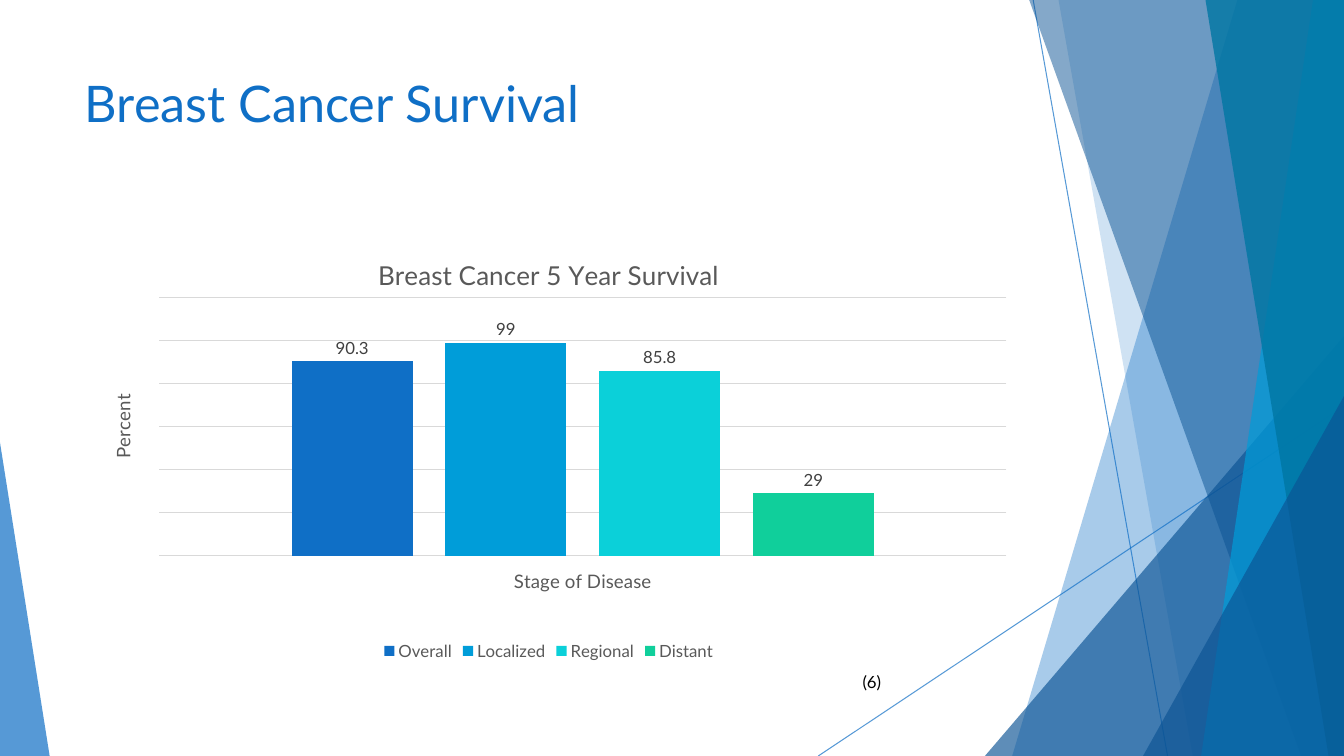
from lxml.etree import SubElement
from pptx import Presentation
from pptx.chart.data import CategoryChartData
from pptx.dml.color import RGBColor
from pptx.enum.chart import XL_CHART_TYPE, XL_LABEL_POSITION, XL_LEGEND_POSITION
from pptx.enum.shapes import MSO_CONNECTOR, MSO_SHAPE
from pptx.oxml import parse_xml
from pptx.oxml.ns import nsdecls, qn
from pptx.util import Pt

FONT = "Lato"
W, H = 960, 540
COLORS = {
    "blue": "0F6FC6", "navy": "0B5394", "sky": "009DD9", "teal": "0076A3",
    "aqua": "0BD0D9", "green": "10CF9B", "grid": "D9D9D9",
    "grey": "595959", "label": "404040", "black": "000000",
}
SURVIVAL = [("Overall", 90.3, "blue"), ("Localized", 99, "sky"),
            ("Regional", 85.8, "aqua"), ("Distant", 29, "green")]
PLOT = {"x": 0.089, "y": 0.139, "w": 0.894, "h": 0.605}


def rgb(name):
    return RGBColor.from_string(COLORS[name])


def set_font(font, size, color):
    formats = {"name": FONT, "size": Pt(size), "bold": False}
    for key, value in formats.items():
        setattr(font, key, value)
    font.color.rgb = rgb(color)


def set_alpha(fill_parent, percent):
    clr = next(fill_parent.iter(qn("a:srgbClr")))
    SubElement(clr, qn("a:alpha")).set("val", str(percent * 1000))


def paint(sp, color, alpha):
    sp.shadow.inherit = False
    sp.fill.solid()
    sp.fill.fore_color.rgb = rgb(color)
    sp.line.fill.background()
    set_alpha(sp.fill._xPr, alpha)


def add_line(s, x1, y1, x2, y2):
    line = s.shapes.add_connector(MSO_CONNECTOR.STRAIGHT, Pt(x1), Pt(y1), Pt(x2), Pt(y2))
    line.line.width = Pt(0.75)
    line.line.color.rgb = rgb("blue")
    sp_pr = line._element.spPr
    set_alpha(sp_pr, 70)
    SubElement(sp_pr, qn("a:effectLst"))


def add_band(s, top_x, bottom_x, color, alpha):
    """Band from a slanted left edge to the right side of the slide."""
    corners = [(W, -0.5), (W, H), (bottom_x, H)]
    builder = s.shapes.build_freeform(Pt(top_x), Pt(-0.5), scale=1.0)
    builder.add_line_segments([(Pt(x), Pt(y)) for x, y in corners], close=True)
    paint(builder.convert_to_shape(), color, alpha)


def add_triangle(s, x, y, w, apex, color, alpha):
    """Triangle that stands on the bottom of the slide."""
    sp = s.shapes.add_shape(MSO_SHAPE.ISOSCELES_TRIANGLE, Pt(x), Pt(y), Pt(w), Pt(H - y))
    sp.adjustments[0] = apex
    paint(sp, color, alpha)


def add_text(s, x, y, w, h, text, size, color):
    tf = s.shapes.add_textbox(Pt(x), Pt(y), Pt(w), Pt(h)).text_frame
    tf.word_wrap = True
    r = tf.paragraphs[0].add_run()
    r.text = text
    set_font(r.font, size, color)


def set_title(owner, text, size):
    tf = owner.text_frame
    r = tf.paragraphs[0].add_run()
    r.text = text
    set_font(r.font, size, "grey")
    return tf


def add_survival_chart(s, x, y, w, h):
    data = CategoryChartData()
    data.categories = ["1"]
    for name, value, _ in SURVIVAL:
        data.add_series(name, [value])
    chart = s.shapes.add_chart(XL_CHART_TYPE.COLUMN_CLUSTERED,
                               Pt(x), Pt(y), Pt(w), Pt(h), data).chart
    set_font(chart.font, 10, "black")
    set_title(chart.chart_title, "Breast Cancer 5 Year Survival", 18.6)
    chart.chart_title.include_in_layout = False

    # Hidden axes that keep their titles
    cat, val = chart.category_axis, chart.value_axis
    set_title(cat.axis_title, "Stage of Disease", 13.3)
    tf = set_title(val.axis_title, "Percent", 13.3)
    for key, value in {"rot": "-5400000", "vert": "horz"}.items():
        tf._txBody.bodyPr.set(key, value)
    for axis in (cat, val):
        axis.visible = False
    for key, value in {"minimum_scale": 0, "maximum_scale": 120, "major_unit": 20}.items():
        setattr(val, key, value)
    grid = val.major_gridlines.format.line
    grid.width = Pt(0.75)
    grid.color.rgb = rgb("grid")

    # Legend
    chart.has_legend = True
    chart.legend.position = XL_LEGEND_POSITION.BOTTOM
    chart.legend.include_in_layout = False
    set_font(chart.legend.font, 12, "grey")

    # Columns and value labels
    plot = chart.plots[0]
    for key, value in {"gap_width": 219, "overlap": -27, "vary_by_categories": False}.items():
        setattr(plot, key, value)
    for series, (_, _, color) in zip(plot.series, SURVIVAL):
        series.format.fill.solid()
        series.format.fill.fore_color.rgb = rgb(color)
        labels = series.data_labels
        labels.show_value = True
        labels.position = XL_LABEL_POSITION.OUTSIDE_END
        set_font(labels.font, 12, "label")

    # Fixed inner plot area
    area = chart._chartSpace.chart.plotArea
    for old in area.findall(qn("c:layout")):
        area.remove(old)
    sizes = "".join(f'<c:{key} val="{value}"/>' for key, value in PLOT.items())
    area.insert(0, parse_xml(
        f'<c:layout {nsdecls("c")}><c:manualLayout><c:layoutTarget val="inner"/>'
        f'<c:xMode val="edge"/><c:yMode val="edge"/>{sizes}</c:manualLayout></c:layout>'))


def main():
    prs = Presentation()
    prs.slide_width, prs.slide_height = Pt(W), Pt(H)
    s = prs.slides.add_slide(prs.slide_layouts[6])

    # Background facets
    add_line(s, 738, 0, 834, H)
    add_line(s, W, 290, 584.5, H)
    add_band(s, 884, 723, "blue", 36)
    add_band(s, 756, 852, "blue", 20)
    add_triangle(s, 703.5, 240, 256.5, 1, "navy", 66)
    add_band(s, 735, 929.5, "navy", 50)
    add_band(s, 938, 858, "sky", 70)
    add_band(s, 861, 949, "teal", 80)
    add_triangle(s, 816.5, 283, 143.5, 1, "navy", 66)
    add_triangle(s, 0, 316, 35.5, 0, "blue", 70)

    # Content
    add_text(s, 53.5, 48, 677, 104, "Breast Cancer Survival", 36, "blue")
    add_survival_chart(s, 53.5, 170, 677, 305)
    add_text(s, 609, 476, 37, 22, "(6)", 12, "black")

    prs.save("out.pptx")


if __name__ == "__main__":
    main()
